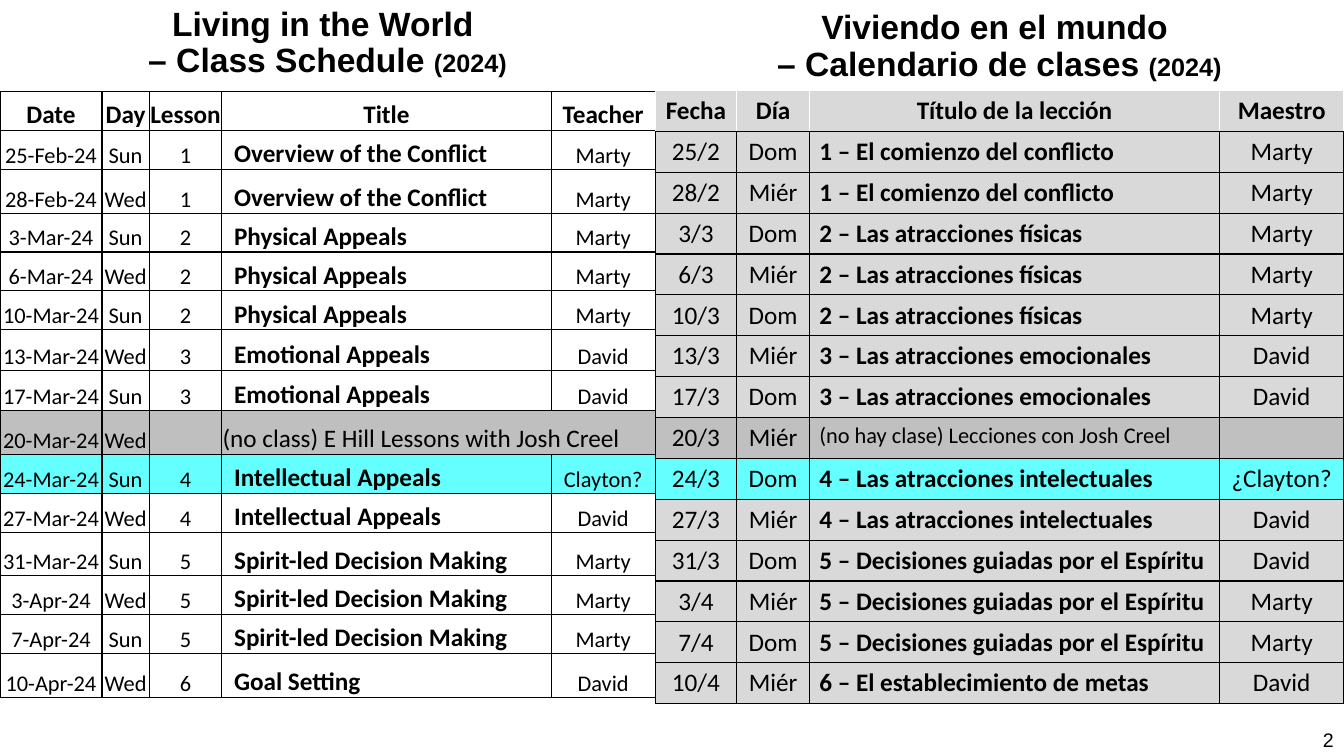
"""Build the bilingual class schedule slide."""
import pptx
import pptx.util
import pptx.dml.color
import pptx.enum.text
import pptx.oxml
import pptx.oxml.ns
from pptx.util import Cm

COLORS = {
    "black": "000000", "white": "FFFFFF", "light": "D9D9D9",
    "gray": "BFBFBF", "silver": "C0C0C0", "cyan": "66FFFF",
}
ALIGN = pptx.enum.text.PP_ALIGN
ANCHOR = pptx.enum.text.MSO_ANCHOR
NO_CLASS_ROW, HIGHLIGHT_ROW = 8, 9

ENGLISH_ROWS = [
    ("Date", "Day", "Lesson", "Title", "Teacher"),
    ("25-Feb-24", "Sun", "1", "Overview of the Conflict", "Marty"),
    ("28-Feb-24", "Wed", "1", "Overview of the Conflict", "Marty"),
    ("3-Mar-24", "Sun", "2", "Physical Appeals", "Marty"),
    ("6-Mar-24", "Wed", "2", "Physical Appeals", "Marty"),
    ("10-Mar-24", "Sun", "2", "Physical Appeals", "Marty"),
    ("13-Mar-24", "Wed", "3", "Emotional Appeals", "David"),
    ("17-Mar-24", "Sun", "3", "Emotional Appeals", "David"),
    ("20-Mar-24", "Wed", "", "(no class) E Hill Lessons with Josh Creel", ""),
    ("24-Mar-24", "Sun", "4", "Intellectual Appeals", "Clayton?"),
    ("27-Mar-24", "Wed", "4", "Intellectual Appeals", "David"),
    ("31-Mar-24", "Sun", "5", "Spirit-led Decision Making", "Marty"),
    ("3-Apr-24", "Wed", "5", "Spirit-led Decision Making", "Marty"),
    ("7-Apr-24", "Sun", "5", "Spirit-led Decision Making", "Marty"),
    ("10-Apr-24", "Wed", "6", "Goal Setting", "David"),
]
SPANISH_ROWS = [
    ("Fecha", "Día", "Título de la lección", "Maestro"),
    ("25/2", "Dom", "1 – El comienzo del conflicto", "Marty"),
    ("28/2", "Miér", "1 – El comienzo del conflicto", "Marty"),
    ("3/3", "Dom", "2 – Las atracciones físicas", "Marty"),
    ("6/3", "Miér", "2 – Las atracciones físicas", "Marty"),
    ("10/3", "Dom", "2 – Las atracciones físicas", "Marty"),
    ("13/3", "Miér", "3 – Las atracciones emocionales", "David"),
    ("17/3", "Dom", "3 – Las atracciones emocionales", "David"),
    ("20/3", "Miér", "(no hay clase) Lecciones con Josh Creel", ""),
    ("24/3", "Dom", "4 – Las atracciones intelectuales", "¿Clayton?"),
    ("27/3", "Miér", "4 – Las atracciones intelectuales", "David"),
    ("31/3", "Dom", "5 – Decisiones guiadas por el Espíritu", "David"),
    ("3/4", "Miér", "5 – Decisiones guiadas por el Espíritu", "Marty"),
    ("7/4", "Dom", "5 – Decisiones guiadas por el Espíritu", "Marty"),
    ("10/4", "Miér", "6 – El establecimiento de metas", "David"),
]
ENGLISH_HEIGHTS = [0.98, 0.98, 1.1, 0.98, 0.98, 0.98, 1.02, 1.02,
                   1.1, 0.98, 0.98, 1.1, 0.98, 0.98, 1.1]


def add_span(para, text, size, font, bold=False):
    """Add one black run to a paragraph."""
    span = para.add_run()
    span.text = text
    span.font.size = pptx.util.Pt(size)
    span.font.name = font
    span.font.bold = bold
    span.font.color.rgb = pptx.dml.color.RGBColor.from_string(COLORS["black"])


def add_box(page, left, top, width, height, anchor, align):
    """Add a wrapping text box and return its frame and first paragraph."""
    box = page.shapes.add_textbox(Cm(left), Cm(top), Cm(width), Cm(height))
    frame = box.text_frame
    frame.word_wrap = True
    frame.vertical_anchor = anchor
    para = frame.paragraphs[0]
    para.alignment = align
    return frame, para


def add_title(page, left, top, width, first, second, split):
    """Add a two-line title, as two paragraphs if split, with the year smaller."""
    frame, para = add_box(page, left, top, width, 2.27, ANCHOR.MIDDLE, ALIGN.CENTER)
    add_span(para, first, 24, "Arial", True)
    if split:
        para = frame.add_paragraph()
        para.alignment = ALIGN.CENTER
    else:
        para.add_line_break()
    add_span(para, second, 24, "Arial", True)
    add_span(para, "(2024)", 18, "Arial", True)
    for line in frame.paragraphs:
        line.line_spacing = 0.9


def set_borders(cell, color):
    """Draw one-point borders, black below and in the given colour elsewhere."""
    properties = cell._tc.get_or_add_tcPr()
    sides = {"lnL": color, "lnR": color, "lnT": color, "lnB": COLORS["black"]}
    for index, (side, value) in enumerate(sides.items()):
        properties.insert(index, pptx.oxml.parse_xml(
            f'<a:{side} {pptx.oxml.ns.nsdecls("a")} w="12700"><a:solidFill>'
            f'<a:srgbClr val="{value}"/></a:solidFill></a:{side}>'))


def fill_cell(cell, text, color, size, bold, align, anchor, margins):
    """Set the fill, layout and text of a cell."""
    cell.fill.solid()
    cell.fill.fore_color.rgb = pptx.dml.color.RGBColor.from_string(color)
    cell.vertical_anchor = anchor
    cell.margin_left, cell.margin_top, cell.margin_right, cell.margin_bottom = map(Cm, margins)
    if text:
        para = cell.text_frame.paragraphs[0]
        para.alignment = align
        add_span(para, text, size, "Calibri", bold)


def add_schedule(page, left, top, rows, widths, heights, title_column, base, no_class,
                 sizes, header_border, anchor, margins, title_indent):
    """Add a schedule table; sizes are for titles, other cells and the no-class note."""
    frame = page.shapes.add_table(len(rows), len(widths), Cm(left), Cm(top),
                                  Cm(sum(widths)), Cm(sum(heights)))
    table = frame.table
    table.first_row = table.horz_banding = False
    for column, width in zip(table.columns, widths):
        column.width = Cm(width)
    for row, height in zip(table.rows, heights):
        row.height = Cm(height)
    title_size, cell_size, note_size = sizes
    fills = {NO_CLASS_ROW: no_class, HIGHLIGHT_ROW: "cyan"}
    for r, texts in enumerate(rows):
        for c, text in enumerate(texts):
            cell = table.cell(r, c)
            header, is_title = r == 0, c == title_column
            note = is_title and r == NO_CLASS_ROW
            size = note_size if note else title_size if header or is_title else cell_size
            align = ALIGN.LEFT if is_title and not header else ALIGN.CENTER
            indent = title_indent if is_title and not header and not note else margins[0]
            fill_cell(cell, text, COLORS[fills.get(r, base)], size,
                      header or is_title and not note, align, anchor,
                      (indent, *margins[1:]))
            set_borders(cell, COLORS[header_border if header else "black"])
    return table


def main():
    """Build and save the slide."""
    deck = pptx.Presentation()
    deck.slide_width, deck.slide_height = Cm(33.87), Cm(19.05)
    page = deck.slides.add_slide(deck.slide_layouts[6])
    add_title(page, 0, -0.03, 16.51, "Living in the World ", "– Class Schedule ", False)
    page_number = add_box(page, 25.96, 18.21, 7.9, 0.84, ANCHOR.TOP, ALIGN.RIGHT)[1]
    add_span(page_number, "2", 14, "Arial")
    english = add_schedule(
        page, 0, 2.31, ENGLISH_ROWS, [2.57, 1.19, 1.83, 8.3, 2.62], ENGLISH_HEIGHTS, 3,
        "white", "gray", (18, 16, 18), "black", ANCHOR.BOTTOM, (0.02, 0.02, 0.02, 0), 0.31)
    english.cell(NO_CLASS_ROW, 3).merge(english.cell(NO_CLASS_ROW, 4))
    add_schedule(
        page, 16.51, 2.28, SPANISH_ROWS, [2.06, 1.83, 10.34, 3.12], [1.03] * 15, 2,
        "light", "silver", (18, 18, 16), "white", ANCHOR.TOP, (0.25, 0.13, 0.25, 0.13), 0.25)
    add_title(page, 16.51, 0.05, 17.35, "Viviendo en el mundo ", "– Calendario de clases ", True)
    deck.save("out.pptx")


if __name__ == "__main__":
    main()
